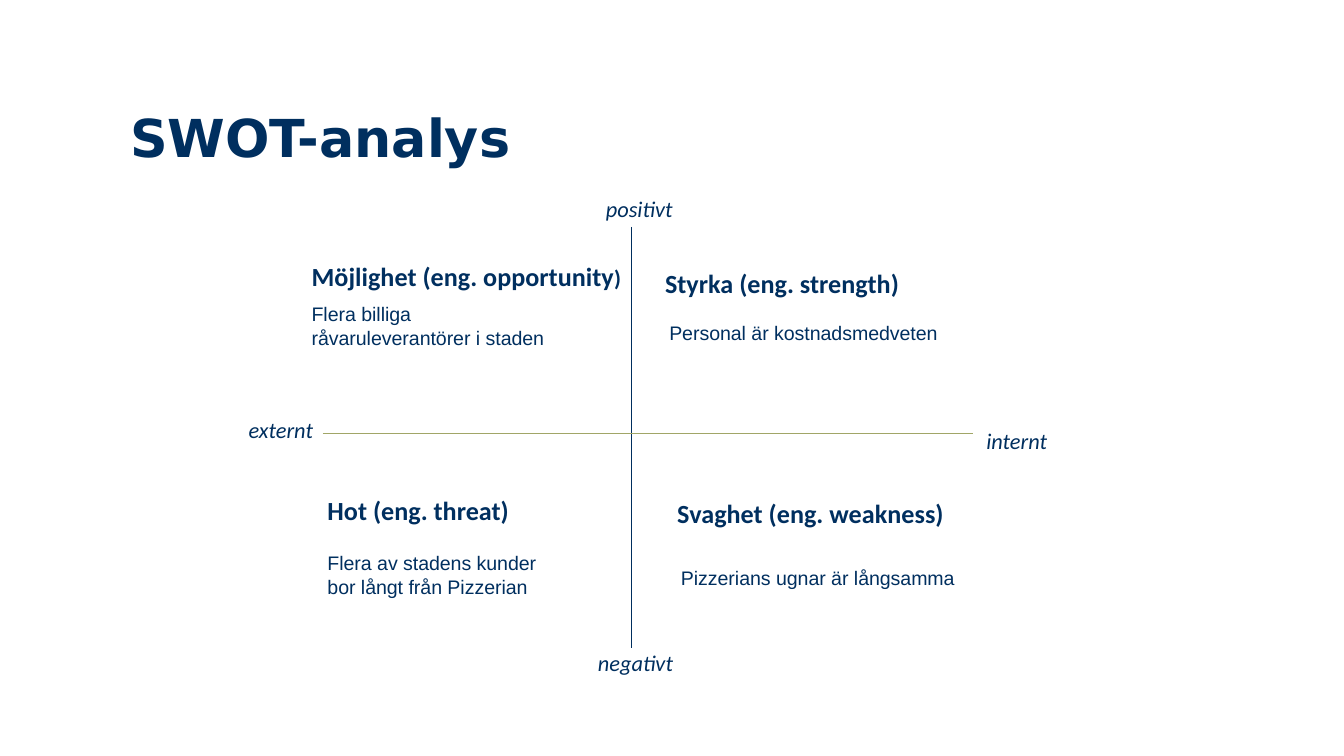
import dataclasses

import lxml.etree
import pptx
import pptx.dml.color
import pptx.enum.shapes
import pptx.enum.text
import pptx.oxml.ns
import pptx.util

Cm = pptx.util.Cm


@dataclasses.dataclass(frozen=True)
class Theme:
    ink: str = "002F5F"
    vertical_axis: str = "002E5D"
    horizontal_axis: str = "A1A667"
    axis_width: float = 0.75
    title: dict = dataclasses.field(
        default_factory=lambda: dict(font="DejaVu Sans", size=28, bold=True))
    label: dict = dataclasses.field(
        default_factory=lambda: dict(font="Calibri", size=12, italic=True))
    heading: dict = dataclasses.field(
        default_factory=lambda: dict(font="Calibri", size=14, bold=True))
    note: dict = dataclasses.field(
        default_factory=lambda: dict(font="Arial", size=10.5))


def add_span(para, text, *, font, size, color, bold=False, italic=False):
    span = para.add_run()
    span.text = text
    span.font.name = font
    span.font.size = pptx.util.Pt(size)
    span.font.bold = bold
    span.font.italic = italic
    span.font.color.rgb = pptx.dml.color.RGBColor.from_string(color)


class SlideBuilder:
    def __init__(self, page, theme):
        self.page = page
        self.theme = theme

    def title(self, text, left, top, width, height):
        box = self.page.shapes.title
        box.left, box.top, box.width, box.height = map(Cm, (left, top, width, height))
        box.text_frame.vertical_anchor = pptx.enum.text.MSO_ANCHOR.MIDDLE
        para = box.text_frame.paragraphs[0]
        para.alignment = pptx.enum.text.PP_ALIGN.LEFT
        add_span(para, text, color=self.theme.ink, **self.theme.title)

    def axis(self, start, end, color):
        line = self.page.shapes.add_connector(
            pptx.enum.shapes.MSO_CONNECTOR.STRAIGHT, *map(Cm, start + end))
        line.line.color.rgb = pptx.dml.color.RGBColor.from_string(color)
        line.line.width = pptx.util.Pt(self.theme.axis_width)
        lxml.etree.SubElement(
            line._element.spPr, pptx.oxml.ns.qn("a:effectLst"))

    def text(self, lines, style, left, top, width, height, wrap=True):
        box = self.page.shapes.add_textbox(*map(Cm, (left, top, width, height)))
        frame = box.text_frame
        frame.word_wrap = wrap
        frame.auto_size = pptx.enum.text.MSO_AUTO_SIZE.SHAPE_TO_FIT_TEXT
        for index, line in enumerate(lines):
            para = frame.add_paragraph() if index else frame.paragraphs[0]
            add_span(para, line, color=self.theme.ink, **style)
        return frame

    def label(self, text, left, top):
        self.text([text], self.theme.label, left, top, 2.69, 0.76)

    def heading(self, text, left, top, width):
        return self.text([text], self.theme.heading, left, top, width, 0.86)

    def note(self, lines, left, top, width, height=1.14, wrap=True):
        self.text(lines, self.theme.note, left, top, width, height, wrap)


def main():
    deck = pptx.Presentation()
    deck.slide_width, deck.slide_height = Cm(25.4), Cm(14.29)
    theme = Theme()
    builder = SlideBuilder(deck.slides.add_slide(deck.slide_layouts[5]), theme)

    builder.title("SWOT-analys", 2.21, 1.75, 19.02, 1.65)
    builder.axis((11.94, 4.29), (11.94, 12.24), theme.vertical_axis)
    builder.axis((6.1, 8.2), (18.39, 8.2), theme.horizontal_axis)

    for text, left, top in (
        ("positivt", 11.2, 3.56),
        ("externt", 4.45, 7.75),
        ("internt", 18.39, 7.95),
        ("negativt", 11.05, 12.14),
    ):
        builder.label(text, left, top)

    builder.heading("Hot (eng. threat)", 5.94, 9.22, 4.04)
    builder.heading("Svaghet (eng. weakness)", 12.55, 9.27, 6.35)
    builder.heading("Styrka (eng. strength)", 12.32, 4.93, 5.99)
    opportunity = builder.heading("Möjlighet (eng. opportunity", 5.64, 4.8, 6.6)
    add_span(opportunity.paragraphs[0], ")", color=theme.ink,
             **{**theme.heading, "size": theme.label["size"]})

    builder.note(["Personal är kostnadsmedveten"], 12.4, 5.94, 5.69, 0.71, wrap=False)
    builder.note(["Pizzerians ugnar är långsamma"], 12.62, 10.57, 5.79, 0.71, wrap=False)
    builder.note(["Flera av stadens kunder bor långt från Pizzerian"], 5.94, 10.29, 5.05)
    builder.note(["Flera billiga", "råvaruleverantörer i staden"], 5.64, 5.59, 9.53)

    deck.save("out.pptx")


if __name__ == "__main__":
    main()
